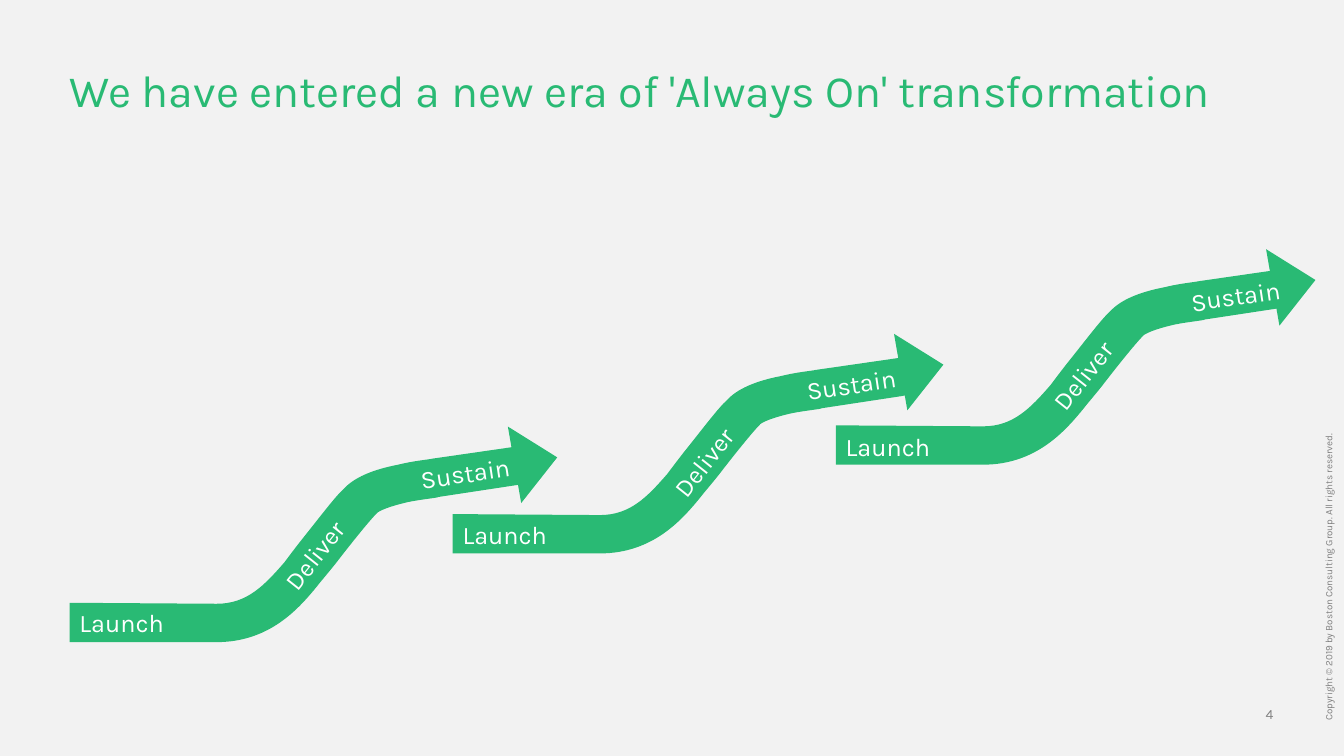
from dataclasses import dataclass

from lxml import etree
from pptx import Presentation
from pptx.dml.color import RGBColor
from pptx.enum import shapes, text
from pptx.oxml.ns import qn
from pptx.util import Inches, Pt


@dataclass(frozen=True)
class Theme:
    font: str = "Karla"
    paper: str = "F2F2F2"
    green: str = "29BA74"
    white: str = "FFFFFF"
    grey: str = "808080"
    title_size: int = 32
    label_size: int = 18
    number_size: int = 10
    copyright_size: int = 7


THEME = Theme()
TITLE = "We have entered a new era of 'Always On' transformation"
COPYRIGHT = "Copyright © 2019 by Boston Consulting Group. All rights reserved."
PAGE_NUMBER = "4"

# Each wave: ribbon corner, then the left and top of its parts
WAVES = [
    {"ribbon": (0.69, 5.98), "Launch": (0.69, 6.01), "Deliver": (2.55, 5.34),
     "Sustain": (3.62, 4.56), "head": (4.93, 4.36)},
    {"ribbon": (4.49, 5.10), "Launch": (4.49, 5.14), "Deliver": (6.41, 4.42),
     "Sustain": (7.45, 3.68), "head": (8.76, 3.44)},
    {"ribbon": (8.29, 4.22), "Launch": (8.29, 4.26), "Deliver": (10.17, 3.56),
     "Sustain": (11.26, 2.80), "head": (12.45, 2.60)},
]

# Phase: width, rotation, alignment
PHASES = {
    "Launch": (1.2, 0, text.PP_ALIGN.LEFT),
    "Sustain": (1.54, 351.4, text.PP_ALIGN.RIGHT),
    "Deliver": (1.13, 308.4, text.PP_ALIGN.CENTER),
}
LABEL_HEIGHT = 0.33
HEAD_SIZE = (0.77, 0.43)
HEAD_ROTATION = 80.1

# Ribbon outline from its corner: one point is a line, three are a Bezier curve
RIBBON_START = (4.5, -1.56)
RIBBON = [
    [(4.5, -1.18)],
    [(4.45, -1.17)],
    [(3.66, -1.05)],
    [(3.65, -1.04), (3.51, -1.03), (3.36, -1.0)],
    [(3.1, -0.94), (3.04, -0.89), (3.04, -0.88)],
    [(2.97, -0.81), (2.77, -0.56), (2.64, -0.39)],
    [(2.56, -0.29), (2.49, -0.21), (2.46, -0.17)],
    [(2.28, 0.05), (1.99, 0.39), (1.46, 0.39)],
    [(0, 0.39)],
    [(0, 0)],
    [(1.46, 0.01)],
    [(1.76, 0.01), (1.93, -0.17), (2.13, -0.4)],
    [(2.16, -0.44), (2.22, -0.52), (2.29, -0.61)],
    [(2.49, -0.86), (2.64, -1.06), (2.72, -1.13)],
    [(2.82, -1.24), (3.0, -1.32), (3.26, -1.37)],
    [(3.42, -1.41), (3.56, -1.42), (3.6, -1.43)],
]


def paint(shape):
    shape.shadow.inherit = False
    shape.fill.solid()
    shape.fill.fore_color.rgb = RGBColor.from_string(THEME.green)
    shape.line.fill.background()


def write(box, words, size, color, align=text.PP_ALIGN.LEFT,
          anchor=text.MSO_ANCHOR.TOP, inset=True):
    frame = box.text_frame
    frame.word_wrap = True
    frame.auto_size = text.MSO_AUTO_SIZE.NONE
    frame.vertical_anchor = anchor
    if not inset:
        frame.margin_left = frame.margin_right = 0
        frame.margin_top = frame.margin_bottom = 0
    para = frame.paragraphs[0]
    para.text = words
    para.alignment = align
    para.font.name = THEME.font
    para.font.size = Pt(size)
    para.font.color.rgb = RGBColor.from_string(color)
    return para


def add_box(page, left, top, width, height, rotation=0):
    box = page.shapes.add_textbox(*map(Inches, (left, top, width, height)))
    box.rotation = rotation
    return box


def add_ribbon(page, left, top):
    """Draw the outline through the segment ends, then bend its curved segments."""
    def place(point):
        return Inches(left + point[0]), Inches(top + point[1])

    builder = page.shapes.build_freeform(*place(RIBBON_START))
    builder.add_line_segments([place(segment[-1]) for segment in RIBBON], close=True)
    ribbon = builder.convert_to_shape()
    paint(ribbon)

    lines = list(ribbon.element.iter(qn("a:lnTo")))
    for line, segment in zip(lines, RIBBON):
        if len(segment) == 1:
            continue
        curve = etree.Element(qn("a:cubicBezTo"))
        for x, y in map(place, segment):
            etree.SubElement(curve, qn("a:pt"), x=str(x - ribbon.left), y=str(y - ribbon.top))
        line.getparent().replace(line, curve)


def add_wave(page, wave):
    add_ribbon(page, *wave["ribbon"])

    head = page.shapes.add_shape(
        shapes.MSO_SHAPE.ISOSCELES_TRIANGLE, *map(Inches, wave["head"] + HEAD_SIZE))
    head.rotation = HEAD_ROTATION
    paint(head)

    for phase, (width, rotation, align) in PHASES.items():
        box = add_box(page, *wave[phase], width, LABEL_HEIGHT, rotation)
        write(box, phase, THEME.label_size, THEME.white, align, text.MSO_ANCHOR.MIDDLE)


def main():
    deck = Presentation()
    deck.slide_width, deck.slide_height = Inches(13.33), Inches(7.5)
    page = deck.slides.add_slide(deck.slide_layouts[5])
    page.background.fill.solid()
    page.background.fill.fore_color.rgb = RGBColor.from_string(THEME.paper)

    title = page.shapes.title
    title.left, title.top, title.width, title.height = map(Inches, (0.69, 0.68, 12.28, 0.48))
    write(title, TITLE, THEME.title_size, THEME.green, inset=False).line_spacing = 0.9

    for wave in WAVES:
        add_wave(page, wave)

    write(add_box(page, 12.21, 7, 0.42, 0.17), PAGE_NUMBER, THEME.number_size, THEME.grey,
          text.PP_ALIGN.RIGHT, text.MSO_ANCHOR.BOTTOM, inset=False)
    write(add_box(page, 10.38, 4.29, 5.61, 0.11, 270), COPYRIGHT, THEME.copyright_size,
          THEME.grey, inset=False).line_spacing = 0.9
    deck.save("out.pptx")


if __name__ == "__main__":
    main()
